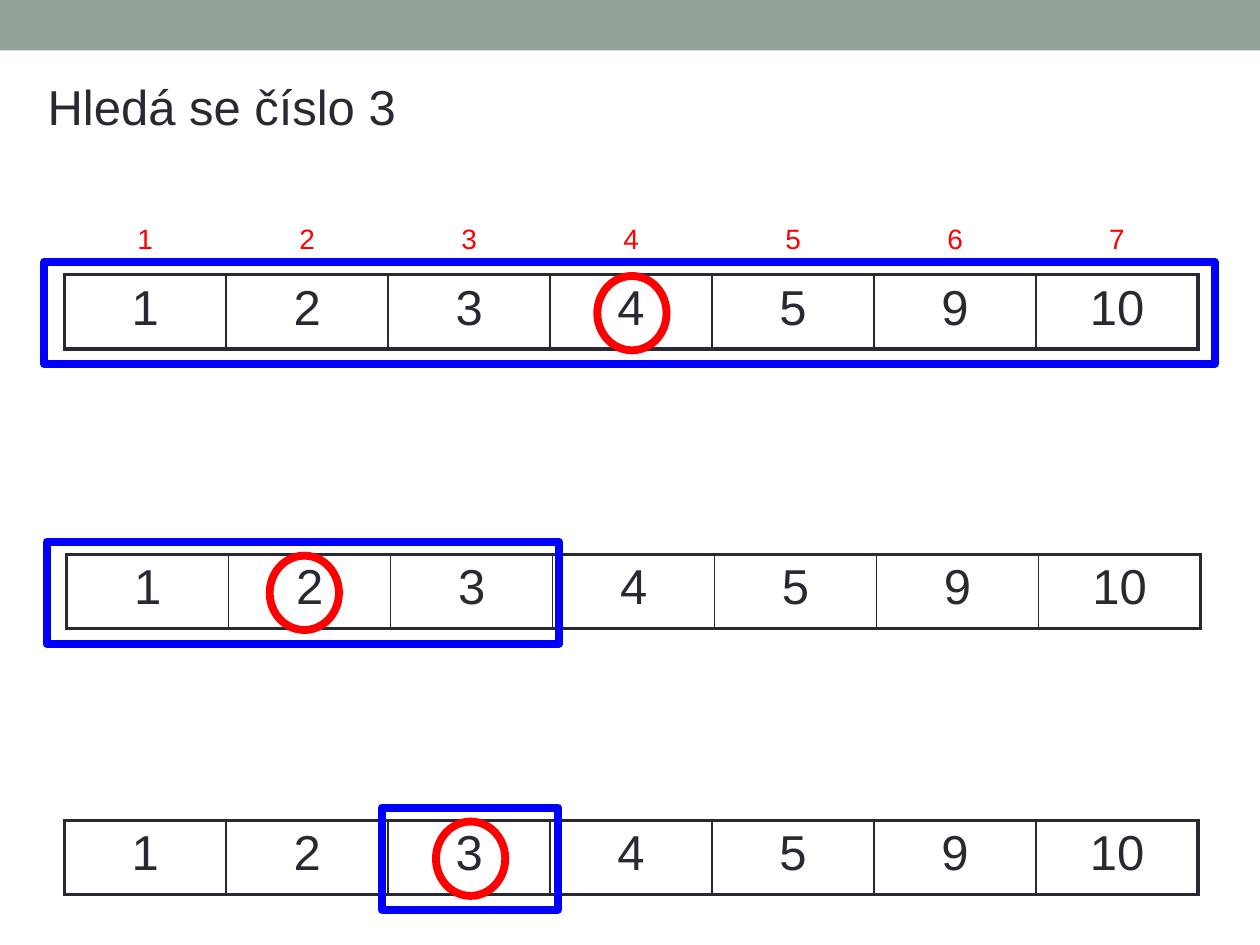
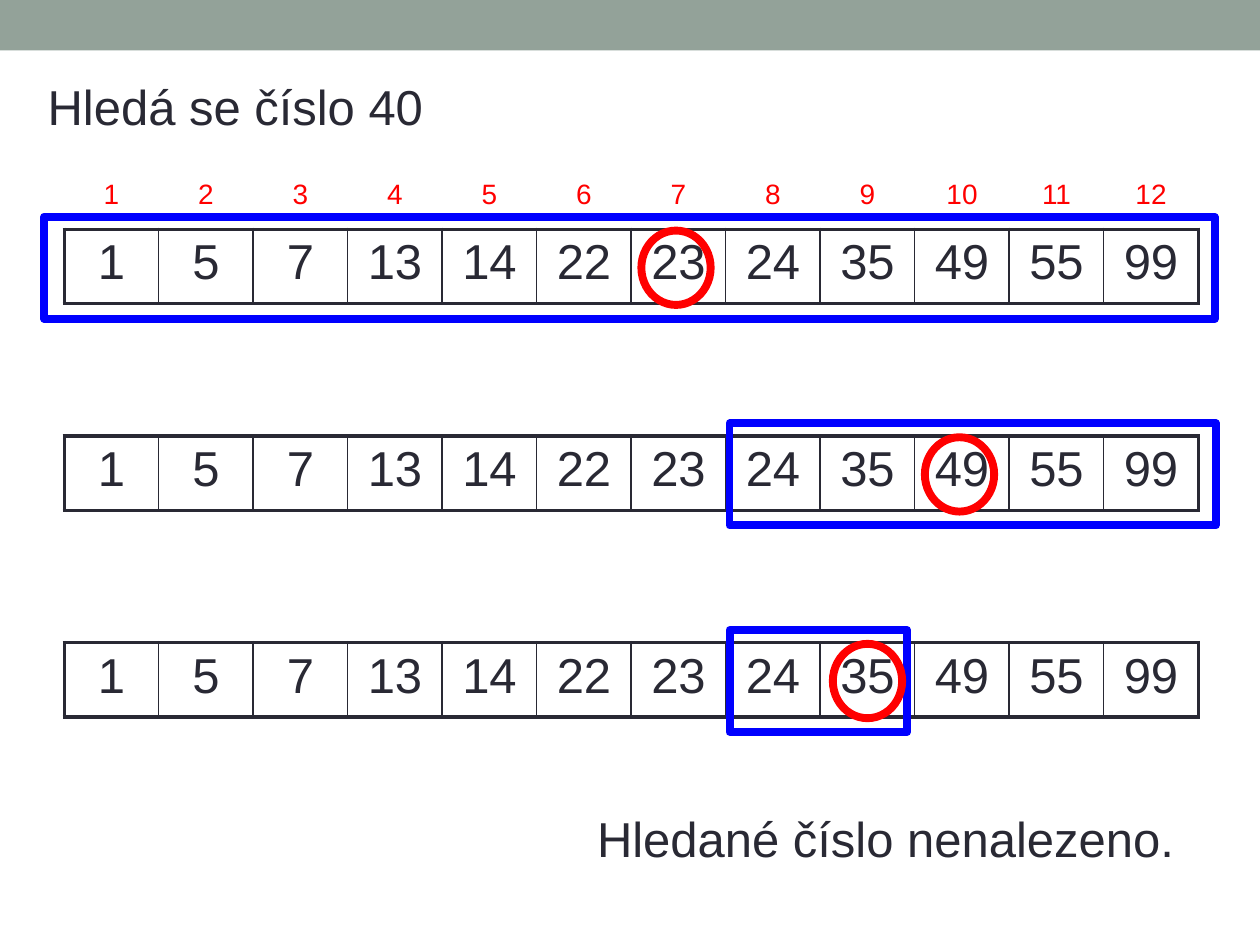
"""Build two slides that trace a binary search step by step."""
from dataclasses import dataclass

from lxml.etree import SubElement as Sub
from pptx import Presentation
from pptx.dml.color import RGBColor as Rgb
from pptx.enum.shapes import MSO_SHAPE as Kind
from pptx.enum.text import MSO_ANCHOR as Anchor, PP_ALIGN as Align
from pptx.oxml.ns import qn
from pptx.util import Inches, Pt

SLIDES = [
    {
        "title": "Hledá se číslo 3",
        "nums": [1, 2, 3, 4, 5, 9, 10],
        "steps": [
            {"at": (0.51, 2.18), "range": (0.35, 9.29), "ring": 4.74},
            {"at": (0.53, 4.4), "range": (0.37, 4.07), "ring": 2.14},
            {"at": (0.51, 6.51), "range": (3.03, 1.4), "ring": 3.46},
        ],
    },
    {
        "title": "Hledá se číslo 40",
        "nums": [1, 5, 7, 13, 14, 22, 23, 24, 35, 49, 55, 99],
        "steps": [
            {"at": (0.51, 1.82), "range": (0.35, 9.29), "ring": 5.09},
            {"at": (0.51, 3.46), "range": (5.79, 3.86), "ring": 7.34},
            {"at": (0.51, 5.1), "range": (5.79, 1.41), "ring": 6.61},
        ],
        "end": "Hledané číslo nenalezeno.",
    },
]


@dataclass(frozen=True)
class Theme:
    """Colours, type sizes, line widths and shared lengths."""
    font: str = "Arial"
    band: str = "93A299"
    ink: str = "292934"
    mark: str = "FF0000"
    range: str = "0000FF"
    big: int = 28
    small: int = 16
    thick: float = 2.25
    thin: float = 1
    bold: float = 4.5
    wide: float = 9
    row: float = 0.59
    head: float = 0.37
    gap: float = 0.1


LOOK = Theme()


def style(para, size, color):
    """Set the font of every run in a paragraph."""
    for run in para.runs:
        run.font.name = LOOK.font
        run.font.size = Pt(size)
        run.font.color.rgb = Rgb.from_string(color)


def add_text(slide, text, *box):
    """Add one line of large text."""
    frame = slide.shapes.add_textbox(*map(Inches, box)).text_frame
    frame.word_wrap = True
    frame.margin_top = Inches(0.09)
    frame.text = text
    style(frame.paragraphs[0], LOOK.big, LOOK.ink)


def add_mark(slide, kind, color, *box):
    """Add an outline around cells."""
    shape = slide.shapes.add_shape(kind, *map(Inches, box))
    shape.shadow.inherit = False
    shape.fill.background()
    shape.line.color.rgb = Rgb.from_string(color)
    shape.line.width = Pt(LOOK.bold)


def add_edge(cell, side, width):
    """Draw one cell border, or hide it when the width is zero."""
    line = Sub(cell._tc.get_or_add_tcPr(), qn(f"a:ln{side}"), w=str(Pt(width)))
    if width:
        fill = Sub(line, qn("a:solidFill"))
        Sub(fill, qn("a:srgbClr"), val=LOOK.ink)
    else:
        Sub(line, qn("a:noFill"))


def add_row(slide, vals, left, top, high, size, color, ruled):
    """Add a one-row table with equal columns."""
    count = len(vals)
    box = map(Inches, (left, top, LOOK.wide, high))
    table = slide.shapes.add_table(1, count, *box).table
    table.first_row = table.horz_banding = False
    for i, val in enumerate(vals):
        table.columns[i].width = Inches(LOOK.wide / count)
        cell = table.cell(0, i)
        cell.text = str(val)
        cell.vertical_anchor = Anchor.TOP if ruled else Anchor.BOTTOM
        para = cell.text_frame.paragraphs[0]
        para.alignment = Align.CENTER
        style(para, size, color)
        outer = {"L": i == 0, "R": i == count - 1, "T": True, "B": True}
        for side, edge in outer.items():
            width = LOOK.thick if edge else LOOK.thin
            add_edge(cell, side, width if ruled else 0)
        cell.fill.background()


def add_step(slide, nums, step):
    """Add the numbers, the searched range and the tested value."""
    left, top = step["at"]
    start, wide = step["range"]
    add_row(slide, nums, left, top, LOOK.row, LOOK.big, LOOK.ink, True)
    add_mark(slide, Kind.RECTANGLE, LOOK.range, start, top - LOOK.gap, wide, 0.81)
    add_mark(slide, Kind.OVAL, LOOK.mark, step["ring"], top + 0.01, 0.55, LOOK.row)


def add_slide(deck, data):
    """Add one search with its band, title and steps."""
    slide = deck.slides.add_slide(deck.slide_layouts[6])
    band = slide.shapes.add_shape(Kind.RECTANGLE, 0, 0, deck.slide_width, Inches(0.4))
    band.shadow.inherit = False
    band.fill.solid()
    band.fill.fore_color.rgb = Rgb.from_string(LOOK.band)
    band.line.fill.background()
    add_text(slide, data["title"], 0.28, 0.52, 6.06, 0.57)
    nums = data["nums"]
    left, top = data["steps"][0]["at"]
    add_row(slide, range(1, len(nums) + 1), left, top - LOOK.gap - LOOK.head,
            LOOK.head, LOOK.small, LOOK.mark, False)
    for step in data["steps"]:
        add_step(slide, nums, step)
    if "end" in data:
        add_text(slide, data["end"], 4.64, 6.33, 4.87, 0.57)


def main():
    """Build and save the deck."""
    deck = Presentation()
    deck.slide_width, deck.slide_height = Inches(10), Inches(7.5)
    for data in SLIDES:
        add_slide(deck, data)
    deck.save("out.pptx")


if __name__ == "__main__":
    main()
